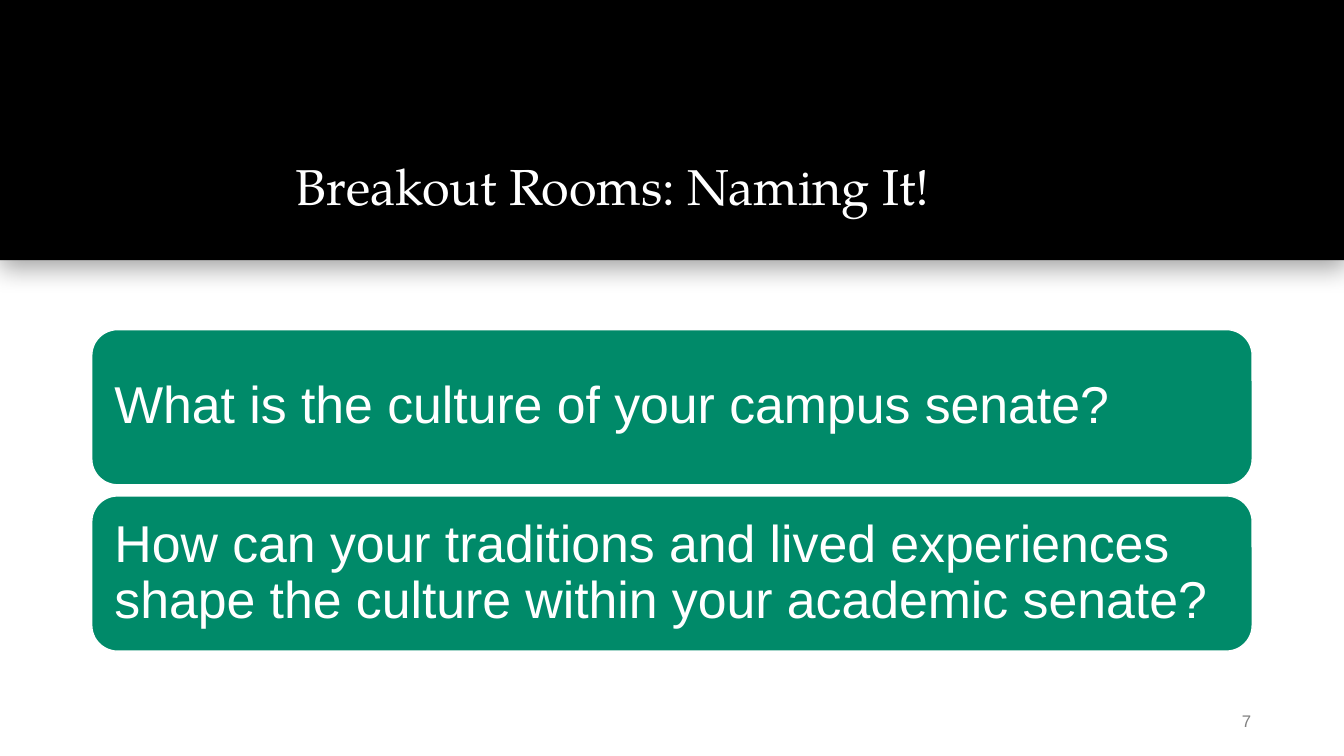
from dataclasses import dataclass

from lxml import etree
from pptx import Presentation
from pptx.dml.color import RGBColor
from pptx.enum.shapes import MSO_SHAPE
from pptx.enum.text import MSO_ANCHOR, PP_ALIGN
from pptx.util import Inches, Pt

RECTANGLE = MSO_SHAPE.RECTANGLE
ROUNDED_RECTANGLE = MSO_SHAPE.ROUNDED_RECTANGLE
BOTTOM = MSO_ANCHOR.BOTTOM
MIDDLE = MSO_ANCHOR.MIDDLE
LEFT = PP_ALIGN.LEFT
RIGHT = PP_ALIGN.RIGHT


@dataclass(frozen=True)
class Theme:
    black: RGBColor = RGBColor(0x00, 0x00, 0x00)
    white: RGBColor = RGBColor(0xFF, 0xFF, 0xFF)
    green: RGBColor = RGBColor(0x00, 0x8A, 0x69)
    gray: RGBColor = RGBColor(0x80, 0x80, 0x80)
    heading_font: str = "TeX Gyre Pagella"
    body_font: str = "Arial"
    title_size: int = 36
    question_size: int = 37
    number_size: int = 12


theme = Theme()


def write_text(shape, text, *, size, color, font=theme.body_font, anchor=MIDDLE,
               align=LEFT, line_spacing=0.9, insets=(0.1, 0.05, 0.1, 0.05)):
    frame = shape.text_frame
    frame.word_wrap = True
    frame.vertical_anchor = anchor
    frame.margin_left, frame.margin_top, frame.margin_right, frame.margin_bottom = map(Inches, insets)
    paragraph = frame.paragraphs[0]
    paragraph.alignment = align
    paragraph.line_spacing = line_spacing
    run = paragraph.add_run()
    run.text = text
    run.font.name = font
    run.font.size = Pt(size)
    run.font.color.rgb = color


presentation = Presentation()
presentation.slide_width = Inches(13.33)
presentation.slide_height = Inches(7.5)
slide = presentation.slides.add_slide(presentation.slide_layouts[6])

banner = slide.shapes.add_shape(RECTANGLE, 0, 0, presentation.slide_width, Inches(2.58))
banner.fill.solid()
banner.fill.fore_color.rgb = theme.black
banner.line.fill.background()
banner.shadow.inherit = False
effects = banner.element.spPr.find("{*}effectLst")
effects.append(etree.fromstring(
    '<a:outerShdw xmlns:a="http://schemas.openxmlformats.org/drawingml/2006/main"'
    f' blurRad="{Pt(18)}" dist="{Pt(5)}" dir="5400000" algn="t" rotWithShape="0">'
    f'<a:srgbClr val="{theme.black}"><a:alpha val="35000"/></a:srgbClr></a:outerShdw>'
))

title = slide.shapes.add_textbox(Inches(2.8), Inches(0.44), Inches(9.62), Inches(1.84))
write_text(title, "Breakout Rooms: Naming It!", size=theme.title_size, color=theme.white,
           font=theme.heading_font, anchor=BOTTOM, insets=(0.13,) * 4)

slide_number = slide.shapes.add_textbox(Inches(11.41), Inches(6.95), Inches(1), Inches(0.4))
write_text(slide_number, "7", size=theme.number_size, color=theme.gray, align=RIGHT,
           line_spacing=1.0, insets=(0.1, 0.05, 0, 0.05))

questions = [
    "What is the culture of your campus senate?",
    "How can your traditions and lived experiences shape the culture within your academic senate?",
]
first_top, card_pitch = 3.27, 1.65
for index, question in enumerate(questions):
    card = slide.shapes.add_shape(ROUNDED_RECTANGLE, Inches(0.91), Inches(first_top + index * card_pitch),
                                  Inches(11.51), Inches(1.54))
    card.shadow.inherit = False
    card.fill.solid()
    card.fill.fore_color.rgb = theme.green
    card.line.color.rgb = theme.white
    card.line.width = Pt(1)
    write_text(card, question, size=theme.question_size, color=theme.white, insets=(0.15,) * 4)

presentation.save("out.pptx")
